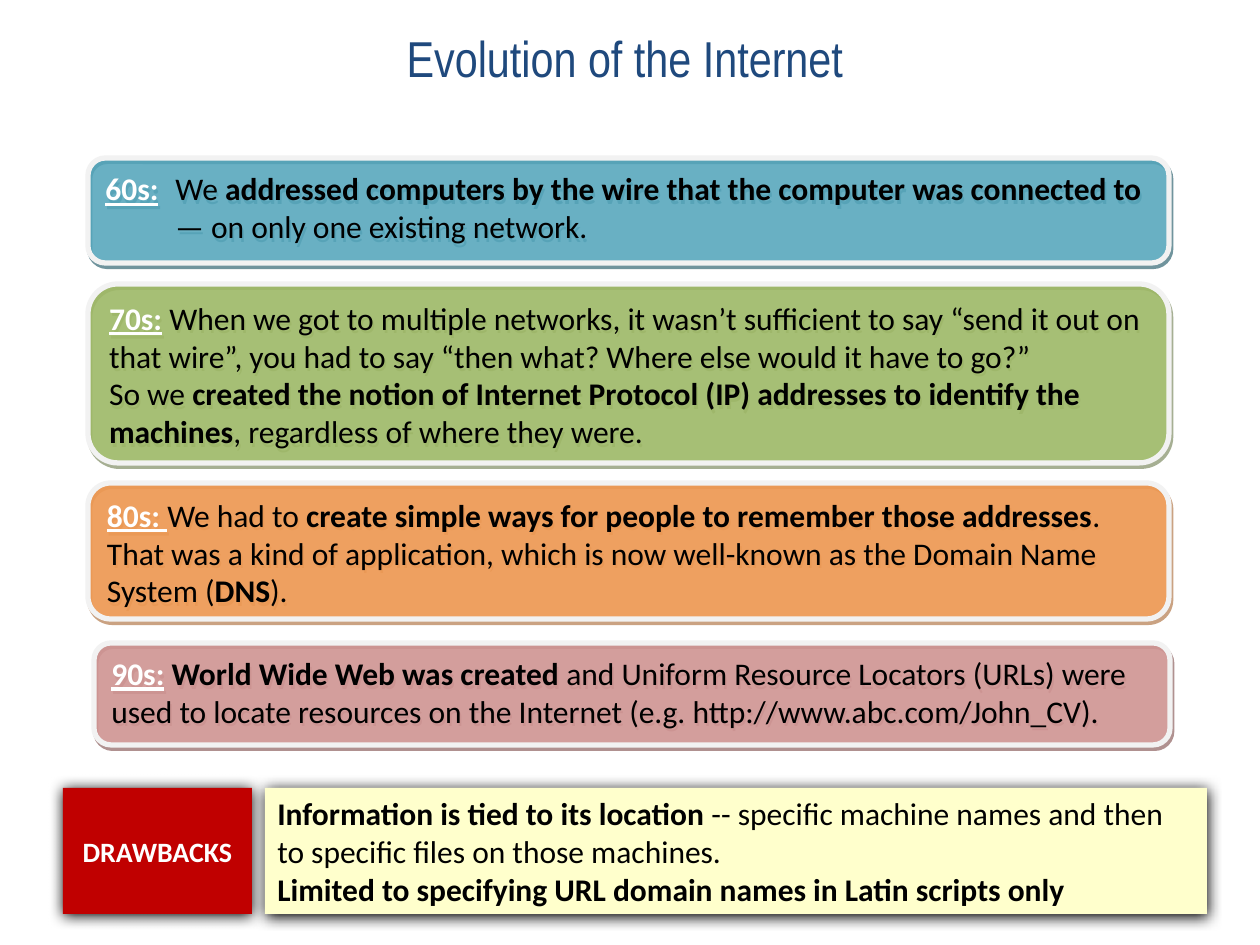
from typing import NamedTuple

from lxml import etree
from pptx import Presentation
from pptx import util as u
from pptx.dml.color import RGBColor
from pptx.enum import shapes, text
from pptx.oxml import ns

EMU_PER_PX = 914400 / 126
COLORS = {
    "ink": "000000", "white": "FFFFFF", "title": "1F497D", "border": "F2F2F2",
    "sixties": "4BACC6", "seventies": "9BBB59", "eighties": "F79646",
    "nineties": "D99694", "drawbacks": "C00000", "note": "FFFFCC",
    "sixties_shadow": "205867", "seventies_shadow": "4E6128",
    "eighties_shadow": "974706", "nineties_shadow": "622423",
}


class Span(NamedTuple):
    text: str
    bold: bool = False
    color: str = "ink"
    underline: bool = False


class Shadow(NamedTuple):
    color: str
    opacity: int
    blur: float
    distance: float
    angle: int


class Decade(NamedTuple):
    key: str
    left: int
    top: int
    width: int
    height: int
    opacity: int
    shadow_opacity: int
    spans: list[Span]
    hanging: int = 0


def px(length: int) -> u.Emu:
    return u.Emu(round(length * EMU_PER_PX))


def rgb(key: str) -> RGBColor:
    return RGBColor.from_string(COLORS[key])


def heading(label: str) -> Span:
    return Span(label, True, "white", True)


def add_text(paragraph, content: str, *, size: float = 18, font: str = "Calibri",
             color: str = "ink", bold: bool = False, underline: bool = False) -> None:
    for index, line in enumerate(content.split("\n")):
        if index:
            paragraph.add_line_break()
        if not line:
            continue
        run = paragraph.add_run()
        run.text = line
        run.font.size = u.Pt(size)
        run.font.name = font
        run.font.bold = bold
        run.font.underline = underline
        run.font.color.rgb = rgb(color)


def add_spans(paragraph, spans: list[Span]) -> None:
    paragraph.alignment = text.PP_ALIGN.LEFT
    for span in spans:
        add_text(paragraph, span.text, bold=span.bold, color=span.color,
                 underline=span.underline)


def set_shadow(shape, shadow: Shadow) -> None:
    shape.shadow.inherit = False
    effects = shape._element.spPr.find(ns.qn("a:effectLst"))
    outer = etree.SubElement(
        effects, ns.qn("a:outerShdw"), blurRad=str(u.Pt(shadow.blur)),
        dist=str(u.Pt(shadow.distance)), dir=str(shadow.angle * 60000), rotWithShape="0")
    tint = etree.SubElement(outer, ns.qn("a:srgbClr"), val=COLORS[shadow.color])
    etree.SubElement(tint, ns.qn("a:alpha"), val=str(shadow.opacity * 1000))


def add_box(slide, kind, left: int, top: int, width: int, height: int,
            fill: str, shadow: Shadow, anchor=text.MSO_ANCHOR.MIDDLE):
    box = slide.shapes.add_shape(kind, px(left), px(top), px(width), px(height))
    box.fill.solid()
    box.fill.fore_color.rgb = rgb(fill)
    box.line.fill.background()
    set_shadow(box, shadow)
    box.text_frame.word_wrap = True
    box.text_frame.vertical_anchor = anchor
    return box


def add_decade(slide, decade: Decade) -> None:
    shadow = Shadow(f"{decade.key}_shadow", decade.shadow_opacity, 0, 2.2, 63)
    panel = add_box(slide, shapes.MSO_SHAPE.FLOWCHART_ALTERNATE_PROCESS,
                    decade.left, decade.top, decade.width, decade.height,
                    decade.key, shadow, text.MSO_ANCHOR.TOP)
    panel.line.color.rgb = rgb("border")
    panel.line.width = u.Pt(3)
    tint = panel._element.spPr.find(ns.qn("a:solidFill"))[0]
    etree.SubElement(tint, ns.qn("a:alpha"), val=str(decade.opacity * 1000))
    paragraph = panel.text_frame.paragraphs[0]
    paragraph.space_after = u.Pt(10)
    if decade.hanging:
        properties = paragraph._p.get_or_add_pPr()
        properties.set("marL", str(px(decade.hanging)))
        properties.set("indent", str(-px(decade.hanging)))
    add_spans(paragraph, decade.spans)


DECADES = [
    Decade("sixties", 88, 158, 1081, 105, 65, 63, [
        heading("60s:"), Span("\tWe "),
        Span("addressed computers by the wire that the computer was connected to\n", True),
        Span("— on only one existing network."),
    ], hanging=70),
    Decade("seventies", 88, 284, 1081, 179, 69, 50, [
        heading("70s:"),
        Span(" When we got to multiple networks, it wasn’t sufficient to say “send it "
             "out on that wire”, you had to say “then what? Where else would it have "
             "to go?”\nSo we "),
        Span("created the notion of Internet Protocol (IP) addresses to identify "
             "the machines", True),
        Span(", regardless of where they were."),
    ]),
    Decade("eighties", 88, 483, 1081, 136, 72, 50, [
        heading("80s: "), Span("We had to "),
        Span("create simple ways for people to remember those addresses", True),
        Span(".\nThat was a kind of application, which is now well-known as the "
             "Domain Name System ("),
        Span("DNS", True), Span(")."),
    ]),
    Decade("nineties", 94, 643, 1076, 102, 70, 50, [
        heading("90s:"), Span(" "), Span("World Wide Web was created ", True),
        Span("and Uniform Resource Locators (URLs) were used to locate resources on "
             "the Internet (e.g. http://www.abc.com/John_CV)."),
    ]),
]
DRAWBACK_NOTES = [
    [Span("Information is tied to its location ", True),
     Span("-- specific machine names and then to specific files on those machines.")],
    [Span("Limited to specifying URL domain names in Latin scripts only", True)],
]


def main() -> None:
    deck = Presentation()
    deck.slide_width, deck.slide_height = px(1260), px(945)
    slide = deck.slides.add_slide(deck.slide_layouts[6])

    # Title
    title = slide.shapes.add_textbox(px(53), px(21), px(1144), px(72)).text_frame
    title.word_wrap = True
    title.vertical_anchor = text.MSO_ANCHOR.MIDDLE
    title.paragraphs[0].alignment = text.PP_ALIGN.CENTER
    add_text(title.paragraphs[0], "Evolution of the Internet", size=28.8,
             font="Arial Narrow", color="title")

    # Decades
    for decade in DECADES:
        add_decade(slide, decade)

    # Drawbacks: label and notes
    glow = Shadow("ink", 100, 8.5, 1, 90)
    label = add_box(slide, shapes.MSO_SHAPE.RECTANGLE, 63, 788, 189, 126,
                    "drawbacks", glow).text_frame.paragraphs[0]
    label.alignment = text.PP_ALIGN.CENTER
    add_text(label, "DRAWBACKS", size=16, color="white", bold=True)

    notes = add_box(slide, shapes.MSO_SHAPE.RECTANGLE, 265, 788, 942, 126,
                    "note", glow).text_frame
    for index, spans in enumerate(DRAWBACK_NOTES):
        add_spans(notes.add_paragraph() if index else notes.paragraphs[0], spans)

    deck.save("out.pptx")


if __name__ == "__main__":
    main()
